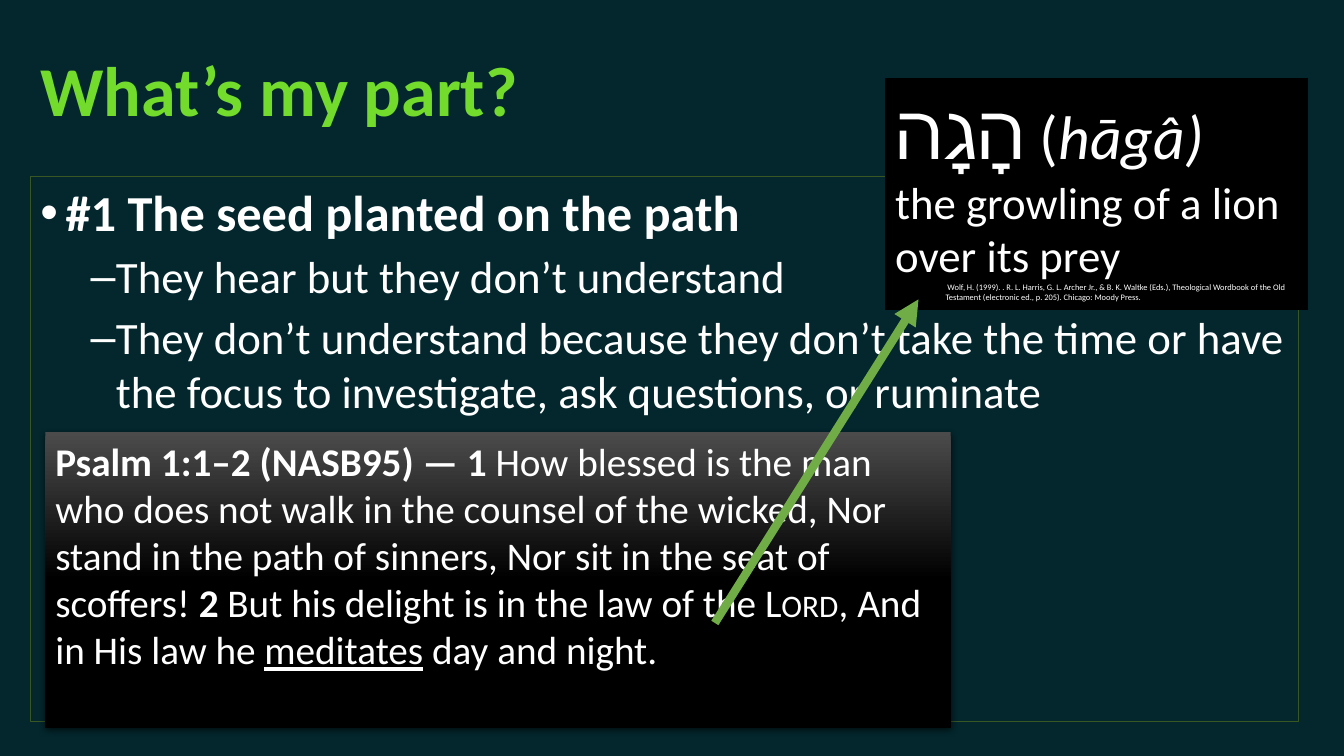
"""Build the slide "What's my part?" about the seed planted on the path."""
from lxml import etree
from pptx import Presentation
from pptx.dml.color import RGBColor
from pptx.enum.shapes import MSO_CONNECTOR, MSO_SHAPE
from pptx.enum.text import MSO_ANCHOR, MSO_AUTO_SIZE, PP_ALIGN
from pptx.oxml import parse_xml
from pptx.oxml.ns import nsdecls, qn
from pptx.util import Inches, Pt

RECT = MSO_SHAPE.RECTANGLE
STRAIGHT = MSO_CONNECTOR.STRAIGHT
TOP, MIDDLE = MSO_ANCHOR.TOP, MSO_ANCHOR.MIDDLE
GROW, FIXED = MSO_AUTO_SIZE.SHAPE_TO_FIT_TEXT, MSO_AUTO_SIZE.NONE
LEFT = PP_ALIGN.LEFT

FONT = "Calibri"
BACK, WHITE, BLACK = "03272D", "FFFFFF", "000000"
TITLE_GREEN, FRAME_GREEN, ARROW_GREEN = "72DB2B", "385723", "70AD47"

TITLE = "What’s my part?"
POINTS = [
    (0, "#1 The seed planted on the path"),
    (1, "They hear but they don’t understand"),
    (1, "They don’t understand because they don’t take the time or have "
        "the focus to investigate, ask questions, or ruminate"),
]
POINT_STYLES = [
    {"size": 36, "bold": True, "indent": 0.25, "before": 10},
    {"size": 32, "bold": False, "indent": 0.75, "before": 5},
]
HANGING = 0.25
PSALM = [
    ("Psalm 1:1–2 (NASB95) — 1 ", {"bold": True}),
    ("How blessed is the man who does not walk in the counsel of the wicked, "
     "Nor stand in the path of sinners, Nor sit in the seat of scoffers! ", {}),
    ("2 ", {"bold": True}),
    ("But his delight is in the law of the ", {}),
    ("Lord", {"small_caps": True}),
    (", And in His law he ", {}),
    ("meditates", {"underline": True}),
    (" day and night.", {}),
]
WORD_STUDY = [
    (0, [("הָגָה", {"size": 54}), (" (", {"size": 44}),
         ("hāgâ)", {"size": 44, "italic": True})]),
    (0, [("the growling of a lion over its prey", {"size": 32})]),
    (1, [(" Wolf, H. (1999). . R. L. Harris, G. L. Archer Jr., & B. K. Waltke (Eds.), "
          "Theological Wordbook of the Old Testament (electronic ed., p. 205). "
          "Chicago: Moody Press.", {"size": 6})]),
]

TITLE_BOX = (0.3, 0.15, 12.58, 1.45)
BODY_BOX = (0.3, 1.75, 12.58, 5.41)
PSALM_BOX = (0.45, 4.29, 8.98, 2.93)
STUDY_BOX = (8.78, 0.78, 4.19, 2.29)
ARROW = (7.09, 6.18, 9.11, 2.97)

GRADIENT = [(0, "4B4B4B"), (50, BLACK), (100, BLACK)]


def rgb(color):
    return RGBColor.from_string(color)


def add_run(p, text, size, color=WHITE, bold=False, italic=False,
            underline=False, small_caps=False):
    r = p.add_run()
    r.text = text
    r.font.name, r.font.size = FONT, Pt(size)
    r.font.bold, r.font.italic, r.font.underline = bold, italic, underline
    r.font.color.rgb = rgb(color)
    if small_caps:
        r.font._element.set("cap", "small")


def place(sp, box):
    sp.left, sp.top, sp.width, sp.height = map(Inches, box)


def set_indent(p, left, first=0):
    pPr = p._p.get_or_add_pPr()
    pPr.set("marL", str(Inches(left)))
    pPr.set("indent", str(Inches(first)))


def next_paragraph(tf, i):
    return tf.paragraphs[0] if i == 0 else tf.add_paragraph()


def add_panel(slide, box):
    sp = slide.shapes.add_shape(RECT, *map(Inches, box))
    sp.shadow.inherit = False
    tf = sp.text_frame
    tf.word_wrap, tf.auto_size, tf.vertical_anchor = True, GROW, TOP
    return sp


def fill_gradient(sp):
    stops = "".join(f'<a:gs pos="{pos * 1000}"><a:srgbClr val="{color}"/></a:gs>'
                    for pos, color in GRADIENT)
    sp.fill.gradient()
    sp.fill.gradient_angle = 270
    old = sp._element.spPr.find(qn("a:gradFill")).find(qn("a:gsLst"))
    old.getparent().replace(
        old, parse_xml(f'<a:gsLst {nsdecls("a")}>{stops}</a:gsLst>'))


def add_shadow(sp):
    effects = sp._element.spPr.find(qn("a:effectLst"))
    effects.append(parse_xml(
        f'<a:outerShdw {nsdecls("a")} blurRad="{Pt(4.5)}" dist="{Pt(1.5)}" '
        f'dir="5400000" rotWithShape="0"><a:srgbClr val="{BLACK}">'
        '<a:alpha val="63000"/></a:srgbClr></a:outerShdw>'))


def add_title(slide):
    sp = slide.shapes.title
    place(sp, TITLE_BOX)
    tf = sp.text_frame
    tf.auto_size, tf.vertical_anchor = FIXED, MIDDLE
    p = tf.paragraphs[0]
    p.alignment = LEFT
    add_run(p, TITLE, 50, TITLE_GREEN, bold=True)


def add_points(slide):
    sp = slide.placeholders[1]
    place(sp, BODY_BOX)
    sp.line.color.rgb = rgb(FRAME_GREEN)
    sp.line.width = Pt(0.75)
    tf = sp.text_frame
    tf.auto_size = FIXED
    for i, (level, text) in enumerate(POINTS):
        style = POINT_STYLES[level]
        p = next_paragraph(tf, i)
        p.level = level
        p.space_before = Pt(style["before"] if i else 0)
        set_indent(p, style["indent"], -HANGING)
        add_run(p, text, style["size"], bold=style["bold"])


def add_psalm(slide):
    sp = add_panel(slide, PSALM_BOX)
    fill_gradient(sp)
    sp.line.fill.background()
    add_shadow(sp)
    p = sp.text_frame.paragraphs[0]
    p.alignment = LEFT
    for text, style in PSALM:
        add_run(p, text, 28, **style)


def add_word_study(slide):
    sp = add_panel(slide, STUDY_BOX)
    sp.fill.solid()
    sp.fill.fore_color.rgb = rgb(BLACK)
    sp.line.color.rgb = rgb(BLACK)
    sp.line.width = Pt(1)
    for i, (level, runs) in enumerate(WORD_STUDY):
        p = next_paragraph(sp.text_frame, i)
        p.alignment, p.level = LEFT, level
        set_indent(p, 0.5 * level)
        for text, style in runs:
            add_run(p, text, **style)


def add_arrow(slide):
    cxn = slide.shapes.add_connector(STRAIGHT, *map(Inches, ARROW))
    cxn.line.color.rgb = rgb(ARROW_GREEN)
    cxn.line.width = Pt(6)
    etree.SubElement(cxn.line._get_or_add_ln(), qn("a:tailEnd"), type="triangle")
    etree.SubElement(cxn._element.spPr, qn("a:effectLst"))


def main():
    prs = Presentation()
    prs.slide_width, prs.slide_height = Inches(13.33), Inches(7.5)
    slide = prs.slides.add_slide(prs.slide_layouts[1])
    slide.background.fill.solid()
    slide.background.fill.fore_color.rgb = rgb(BACK)
    add_title(slide)
    add_points(slide)
    add_psalm(slide)
    add_word_study(slide)
    add_arrow(slide)
    prs.save("out.pptx")


if __name__ == "__main__":
    main()
